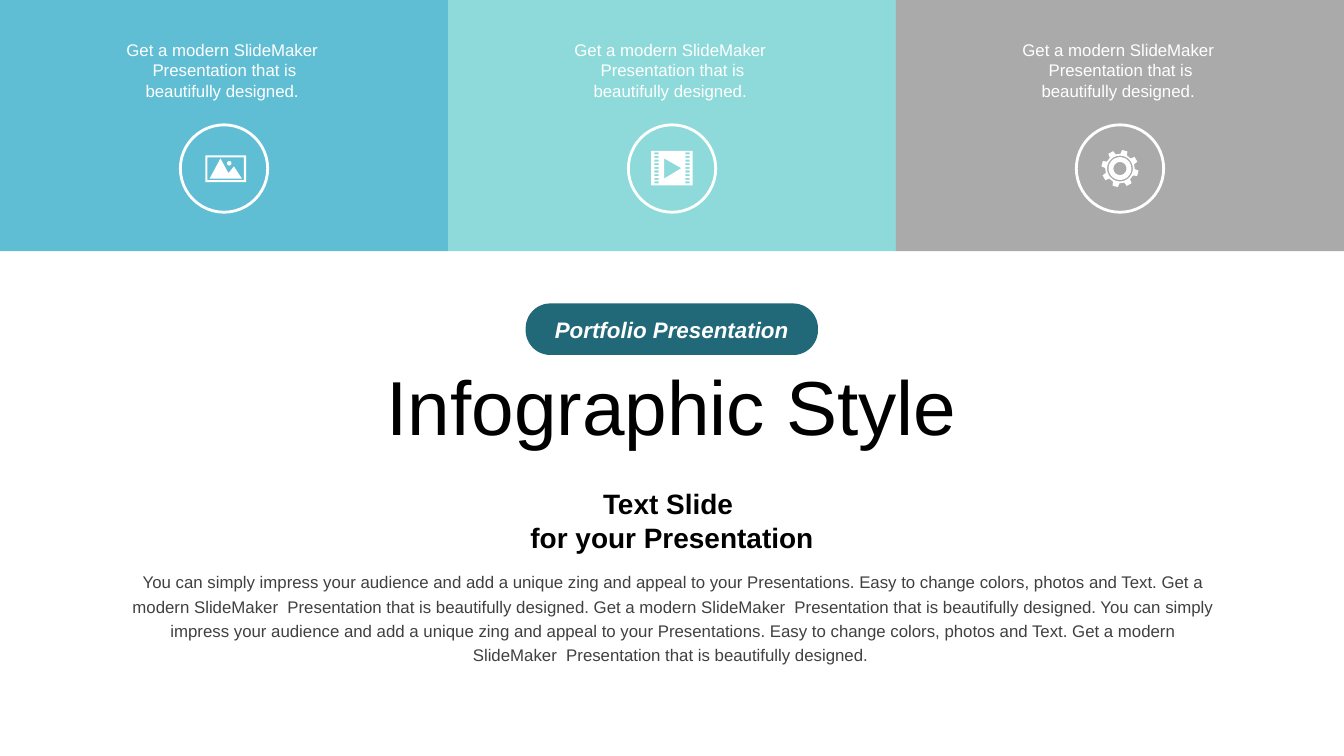
from math import cos, radians, sin

from pptx import Presentation
from pptx.dml.color import RGBColor
from pptx.enum.shapes import MSO_SHAPE
from pptx.enum.text import MSO_ANCHOR, PP_ALIGN
from pptx.util import Pt

WHITE = RGBColor(0xFF, 0xFF, 0xFF)
BLACK = RGBColor(0x00, 0x00, 0x00)
DARK_GRAY = RGBColor(0x40, 0x40, 0x40)
BLUE = RGBColor(0x60, 0xBE, 0xD4)
MINT = RGBColor(0x8E, 0xDA, 0xDA)
GRAY = RGBColor(0xAA, 0xAA, 0xAA)
TEAL = RGBColor(0x21, 0x68, 0x79)

COLUMN_WIDTH = 240
BAND_HEIGHT = 134.6
BADGE_SIZE = 46.8
BADGE_CENTER = 90.3

PITCH = "Get a modern SlideMaker  Presentation that is beautifully designed. "
APPEAL = (
    "You can simply impress your audience and add a unique zing and appeal to your "
    "Presentations. Easy to change colors, photos and Text. "
)
BODY = APPEAL + PITCH * 2 + APPEAL + PITCH


def write_text(shape, text, size, color, anchor=MSO_ANCHOR.MIDDLE,
               bold=False, italic=False, spacing=None):
    frame = shape.text_frame
    frame.word_wrap = True
    frame.vertical_anchor = anchor
    frame.margin_left = frame.margin_right = Pt(5.4)
    frame.margin_top = frame.margin_bottom = Pt(2.7)
    frame.text = text
    for para in frame.paragraphs:
        para.alignment = PP_ALIGN.CENTER
        para.line_spacing = spacing
        for span in para.runs:
            span.font.name = "Arial"
            span.font.size = Pt(size)
            span.font.color.rgb = color
            span.font.bold = bold
            span.font.italic = italic


def add_text(page, left, top, width, height, text, size, color, **style):
    box = page.shapes.add_textbox(Pt(left), Pt(top), Pt(width), Pt(height))
    write_text(box, text, size, color, **style)


def add_block(page, kind, left, top, width, height, color):
    block = page.shapes.add_shape(kind, Pt(left), Pt(top), Pt(width), Pt(height))
    block.shadow.inherit = False
    block.fill.solid()
    block.fill.fore_color.rgb = color
    block.line.fill.background()
    return block


def add_icon(page, center_x, center_y, outlines):
    placed = [[(Pt(center_x + x), Pt(center_y + y)) for x, y in outline]
              for outline in outlines]
    builder = page.shapes.build_freeform(*placed[0][0], scale=1.0)
    for outline in placed:
        builder.move_to(*outline[0])
        builder.add_line_segments(outline[1:], close=True)
    icon = builder.convert_to_shape()
    icon.shadow.inherit = False
    icon.fill.solid()
    icon.fill.fore_color.rgb = WHITE
    icon.line.fill.background()


def rectangle(left, top, right, bottom):
    return [(left, top), (right, top), (right, bottom), (left, bottom)]


def polar(radius, angle, x=0, y=0):
    return x + radius * cos(radians(angle)), y + radius * sin(radians(angle))


def circle(radius, x=0, y=0):
    return [polar(radius, angle, x, y) for angle in range(0, 360, 10)]


def photo_outlines():
    mountains = [(-1.9, -5.4), (2.4, 2.5), (5.3, -1.1), (9.6, 5.4), (-7.7, 5.4)]
    return [rectangle(-10, -7, 11.8, 7.3), rectangle(-8.9, -5.9, 10.7, 6.2),
            mountains, circle(1.2, 2.8, -2.8)]


def film_outlines():
    holes = [rectangle(left, -8.7 + 1.95 * row, left + 2.2, -7.6 + 1.95 * row)
             for left in (-9.4, 7.2) for row in range(9)]
    play = [(-4.2, -5.4), (-4.2, 5.4), (5, -0.2)]
    return [rectangle(-11.2, -9.5, 11, 9), play] + holes


def gear_outlines():
    profile = ((7.9, -13), (10, -8.5), (10, 8.5), (7.9, 13))
    teeth = [polar(radius, 15 + 45 * tooth + offset)
             for tooth in range(8) for radius, offset in profile]
    return [teeth, circle(6.9), circle(6.1), circle(3.5)]


def add_column(page, index, color, outlines):
    left = index * COLUMN_WIDTH
    center = left + COLUMN_WIDTH / 2
    add_block(page, MSO_SHAPE.RECTANGLE, left, 0, COLUMN_WIDTH, BAND_HEIGHT, color)
    badge = add_block(page, MSO_SHAPE.OVAL, center - BADGE_SIZE / 2,
                      BADGE_CENTER - BADGE_SIZE / 2, BADGE_SIZE, BADGE_SIZE, color)
    badge.line.color.rgb = WHITE
    badge.line.width = Pt(1.5)
    add_icon(page, center, BADGE_CENTER, outlines)
    add_text(page, center - 59.5, 18.7, 119.5, 38.2, PITCH, 9, WHITE,
             anchor=MSO_ANCHOR.TOP)


def add_pill(page):
    pill = add_block(page, MSO_SHAPE.ROUNDED_RECTANGLE, 281.6, 162.6, 156.6, 27.6, TEAL)
    pill.adjustments[0] = 0.48
    write_text(pill, "Portfolio Presentation", 12, WHITE, bold=True, italic=True)


def main():
    deck = Presentation()
    deck.slide_width, deck.slide_height = Pt(720), Pt(405)
    page = deck.slides.add_slide(deck.slide_layouts[6])
    columns = ((BLUE, photo_outlines()), (MINT, film_outlines()), (GRAY, gear_outlines()))
    for index, (color, outlines) in enumerate(columns):
        add_column(page, index, color, outlines)
    add_text(page, 177, 189.4, 366, 55.4, "Infographic Style", 41, BLACK)
    add_pill(page)
    add_text(page, 181.4, 257.8, 357.2, 41.8,
             "Text Slide \nfor your Presentation", 15, BLACK, bold=True)
    add_text(page, 65.5, 301.7, 589.7, 57.6, BODY, 9, DARK_GRAY,
             anchor=MSO_ANCHOR.TOP, spacing=1.2)
    deck.save("out.pptx")


if __name__ == "__main__":
    main()
